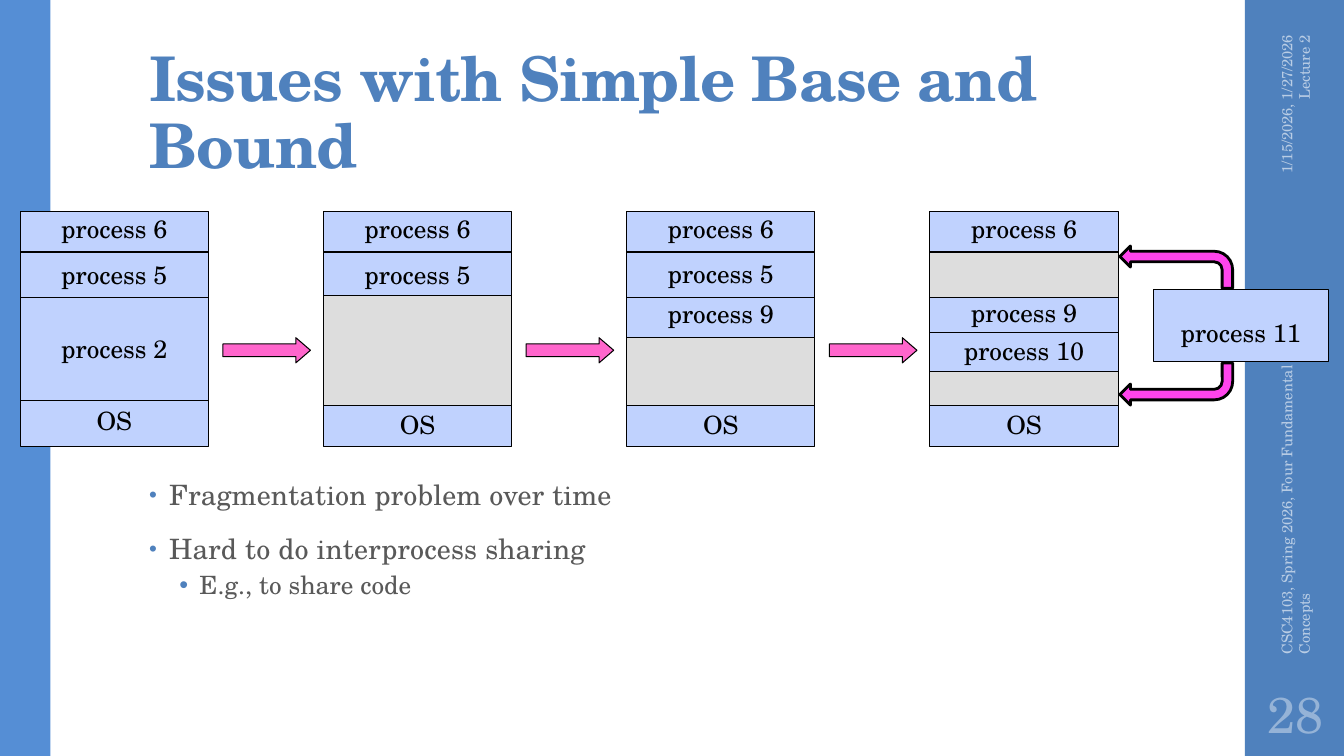
from dataclasses import dataclass
from typing import Any

import lxml.etree
import pptx
import pptx.dml.color
import pptx.enum.shapes
import pptx.enum.text
import pptx.oxml.ns
import pptx.util

Pt = pptx.util.Pt
RGBColor = pptx.dml.color.RGBColor
SHAPE = pptx.enum.shapes.MSO_SHAPE
ALIGN = pptx.enum.text.PP_ALIGN
ANCHOR = pptx.enum.text.MSO_ANCHOR
qn = pptx.oxml.ns.qn

FONT = "TeX Gyre Schola"
BLUE = RGBColor(0x4F, 0x81, 0xBD)
SKY = RGBColor(0x55, 0x8E, 0xD5)
PALE = RGBColor(0xC0, 0xD2, 0xFE)
GRAY = RGBColor(0xDD, 0xDD, 0xDD)
INK = RGBColor(0x59, 0x59, 0x59)
MIST = RGBColor(0xB9, 0xCD, 0xE5)
STEEL = RGBColor(0x95, 0xB3, 0xD7)
PINK = RGBColor(0xFF, 0x66, 0xCC)
HOT = RGBColor(0xFF, 0x44, 0xEC)
BLACK = RGBColor(0, 0, 0)

LEFT, STEP, WIDE = 14.4, 216.6, 134.6
TOP, TALL = 151.2, 167.8
ROW = 28.8


@dataclass(frozen=True)
class Label:
    text: str
    top: float


@dataclass(frozen=True)
class Gap:
    top: float
    tall: float


@dataclass(frozen=True)
class Stack:
    labels: tuple[Label, ...]
    gaps: tuple[Gap, ...] = ()
    rules: tuple[float, ...] = (180, 212.4, 285.8)


@dataclass(frozen=True)
class Point:
    text: str
    size: float
    indent: float
    line: float
    before: float
    after: float
    mark: int
    space: int


STACKS = (
    Stack((Label("process 6", 149), Label("process 5", 181.8),
           Label("process 2", 234.8), Label("OS", 285.8))),
    Stack((Label("process 6", 149), Label("process 5", 181.8), Label("OS", 288.8)),
          (Gap(211.4, 78),)),
    Stack((Label("process 6", 149), Label("process 5", 181), Label("process 9", 209.6),
           Label("OS", 288.8)), (Gap(241.2, 48.2),)),
    Stack((Label("process 6", 149), Label("process 9", 208.8), Label("process 10", 236.2),
           Label("OS", 288.8)), (Gap(180, 32.4), Gap(265.6, 23.8)),
          (180, 212.4, 237.8, 285.8)),
)

POINTS = (
    Point("Fragmentation problem over time", 20, 14.4, 0.95, 0, 2, 80, 10),
    Point("Hard to do interprocess sharing", 20, 14.4, 0.95, 14, 2, 80, 10),
    Point("E.g., to share code", 18, 36, 0.9, 3, 3, 100, 0),
)


def write(par: Any, text: str, *, size: float = 18, color: RGBColor = BLACK,
          bold: bool = False, align: Any = ALIGN.LEFT, line: float = 1,
          space: int = 0) -> None:
    """Fill a paragraph; space is the letter spacing in 1/100 pt."""
    par.alignment = align
    par.line_spacing = line
    run = par.add_run()
    run.text = text
    run.font.name = FONT
    run.font.size = Pt(size)
    run.font.bold = bold
    run.font.color.rgb = color
    if space:
        run.font._element.set("spc", str(space))


def pad(frame: Any, left: float, top: float, right: float, base: float) -> None:
    """Set wrapping and the inner margins of a text frame."""
    frame.word_wrap = True
    frame.margin_left, frame.margin_top = Pt(left), Pt(top)
    frame.margin_right, frame.margin_bottom = Pt(right), Pt(base)


def add_text(slide: Any, x: float, y: float, wide: float, tall: float,
             text: str, *, turn: float = 0, side: float = 7.2, **style: Any) -> None:
    box = slide.shapes.add_textbox(Pt(x), Pt(y), Pt(wide), Pt(tall))
    box.rotation = turn
    pad(box.text_frame, side, 3.6, side, 3.6)
    box.text_frame.vertical_anchor = ANCHOR.MIDDLE
    write(box.text_frame.paragraphs[0], text, **style)


def add_form(slide: Any, kind: Any, x: float, y: float, wide: float, tall: float,
             fill: RGBColor, edge: float = 0.75) -> Any:
    """Add a filled preset shape; an edge of 0 leaves out its outline."""
    form = slide.shapes.add_shape(kind, Pt(x), Pt(y), Pt(wide), Pt(tall))
    form.shadow.inherit = False
    form.fill.solid()
    form.fill.fore_color.rgb = fill
    if edge:
        form.line.color.rgb = BLACK
        form.line.width = Pt(edge)
    else:
        form.line.fill.background()
    return form


def add_rule(slide: Any, x: float, y: float) -> None:
    rule = slide.shapes.add_connector(pptx.enum.shapes.MSO_CONNECTOR.STRAIGHT,
                                      Pt(x), Pt(y), Pt(x + WIDE), Pt(y))
    rule.line.color.rgb = BLACK
    rule.line.width = Pt(0.75)
    lxml.etree.SubElement(rule._element.spPr, qn("a:effectLst"))


def add_stack(slide: Any, x: float, stack: Stack) -> None:
    add_form(slide, SHAPE.RECTANGLE, x, TOP, WIDE, TALL, PALE)
    for y in stack.rules:
        add_rule(slide, x, y)
    for gap in stack.gaps:
        add_form(slide, SHAPE.RECTANGLE, x, gap.top, WIDE, gap.tall, GRAY)
    for label in stack.labels:
        add_text(slide, x, label.top, WIDE, ROW, label.text, align=ALIGN.CENTER)


def add_mark(par: Any, point: Point) -> None:
    """Give a paragraph a hanging blue bullet."""
    props = par._p.get_or_add_pPr()
    props.set("marL", str(Pt(point.indent)))
    props.set("indent", str(-Pt(14.4)))
    tint = lxml.etree.SubElement(props, qn("a:buClr"))
    lxml.etree.SubElement(tint, qn("a:srgbClr")).set("val", str(BLUE))
    lxml.etree.SubElement(props, qn("a:buSzPct")).set("val", str(point.mark * 1000))
    lxml.etree.SubElement(props, qn("a:buFont")).set("typeface", "Arial")
    lxml.etree.SubElement(props, qn("a:buChar")).set("char", "•")


def add_points(slide: Any) -> None:
    frame = slide.shapes.add_textbox(Pt(99.4), Pt(339), Pt(676.8), Pt(140)).text_frame
    pad(frame, 7.2, 3.6, 7.2, 3.6)
    for i, point in enumerate(POINTS):
        par = frame.add_paragraph() if i else frame.paragraphs[0]
        par.level = 1 if point.indent > 20 else 0
        write(par, point.text, size=point.size, color=INK, line=point.line,
              space=point.space)
        par.space_before, par.space_after = Pt(point.before), Pt(point.after)
        add_mark(par, point)


def add_title(slide: Any) -> None:
    title = slide.shapes.title
    title.left, title.top = Pt(99.4), Pt(23)
    title.width, title.height = Pt(763.2), Pt(110.2)
    pad(title.text_frame, 7.2, 2.2, 7.2, 3.6)
    title.text_frame.auto_size = pptx.enum.text.MSO_AUTO_SIZE.NONE
    title.text_frame.vertical_anchor = ANCHOR.BOTTOM
    write(title.text_frame.paragraphs[0], "Issues with Simple Base and Bound",
          size=44, color=BLUE, bold=True, line=0.9, space=-50)


def add_guest(slide: Any) -> None:
    """Draw process 11 and the arrows to the two free gaps."""
    box = add_form(slide, SHAPE.RECTANGLE, 823.7, 206.6, 125.3, 51.8, PALE)
    pad(box.text_frame, 7.2, 13.6, 7.2, 3.6)
    box.text_frame.vertical_anchor = ANCHOR.MIDDLE
    write(box.text_frame.paragraphs[0], "process 11", align=ALIGN.CENTER)
    high, low = (add_form(slide, SHAPE.BENT_ARROW, 799.9, y, 80.6, 30.2, HOT, 2)
                 for y in (175.7, 259.2))
    high._element.spPr.find(qn("a:xfrm")).set("flipH", "1")
    low.rotation = 180


def main() -> None:
    deck = pptx.Presentation()
    deck.slide_width, deck.slide_height = Pt(960), Pt(540)
    slide = deck.slides.add_slide(deck.slide_layouts[5])
    add_form(slide, SHAPE.RECTANGLE, 889.2, 0, 70.8, 540, BLUE, 0)
    add_form(slide, SHAPE.RECTANGLE, 0, 0, 36, 540, SKY, 0)
    add_title(slide)
    add_points(slide)
    add_text(slide, 850.3, 78.5, 149.8, ROW, "1/15/2026, 1/27/2026 Lecture 2",
             turn=270, size=10.5, color=MIST, align=ALIGN.RIGHT)
    add_text(slide, 784.1, 319, 282.2, ROW,
             "CSC4103, Spring 2026, Four Fundamental OS Concepts",
             turn=270, size=10.5, color=MIST)
    add_text(slide, 889.2, 486, 72, 46.8, "28", side=3.6, size=36, color=STEEL,
             align=ALIGN.CENTER)
    for i, stack in enumerate(STACKS):
        x = LEFT + i * STEP
        add_stack(slide, x, stack)
        if i:
            arrow = add_form(slide, SHAPE.RIGHT_ARROW, x - 71.8, 241.2, 62.6, 18, PINK)
            arrow.adjustments[1] = 0.58
    add_guest(slide)
    deck.save("out.pptx")


if __name__ == "__main__":
    main()
